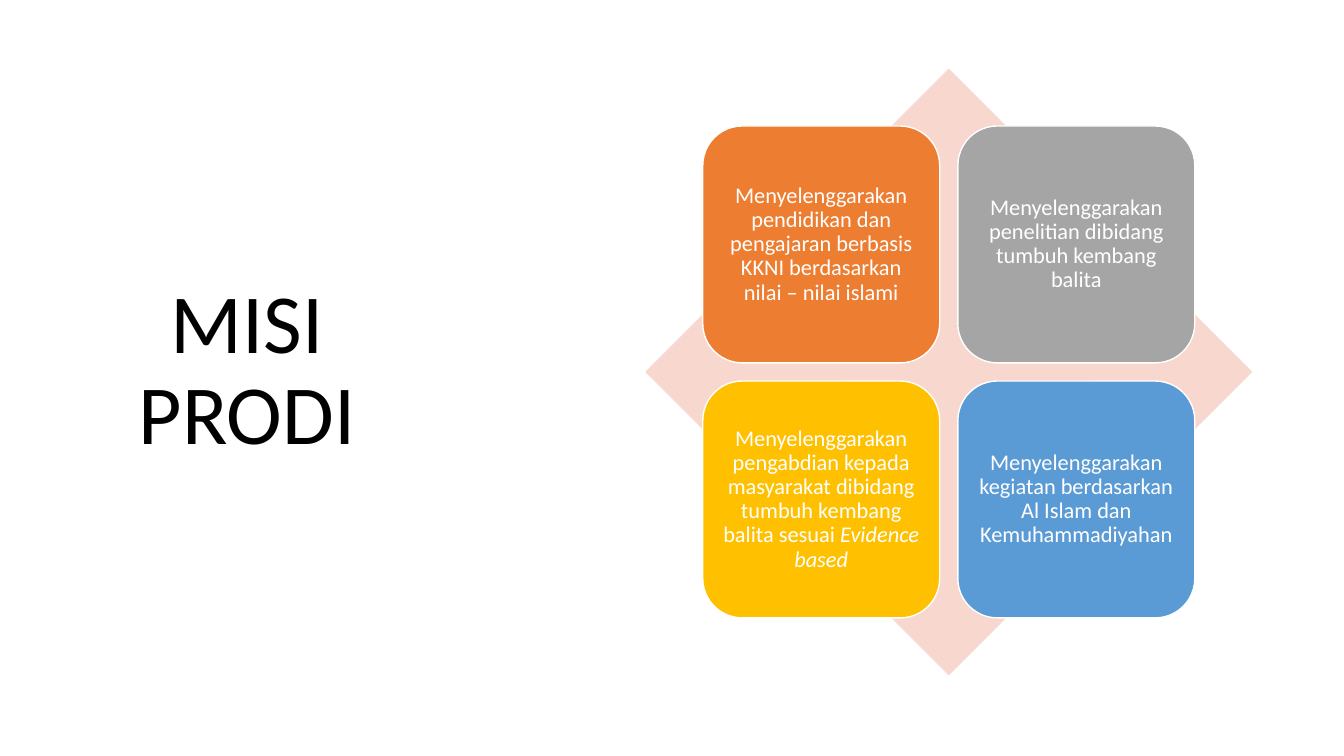
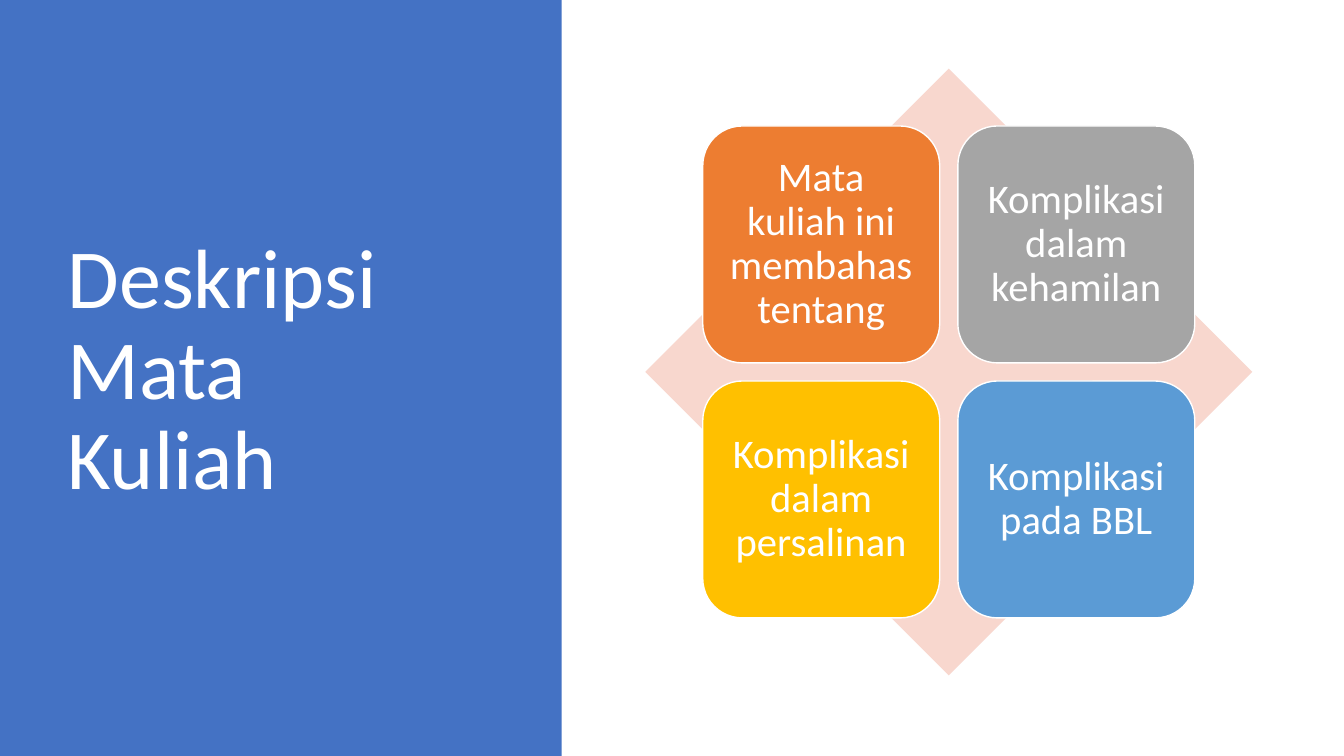
from dataclasses import dataclass
from itertools import product

from pptx import Presentation
from pptx.dml.color import RGBColor
from pptx.enum.shapes import MSO_SHAPE as Preset
from pptx.enum.text import MSO_ANCHOR as Anchor, MSO_AUTO_SIZE as AutoSize, PP_ALIGN as Align
from pptx.util import Pt

# Lengths are px, 100 to the inch
EMU_PER_PX = 9144
SLIDE_W, SLIDE_H = 1333, 750
TITLE_ONLY = 5

# Shared colours and text style
WHITE = RGBColor(0xFF, 0xFF, 0xFF)
BLACK = RGBColor(0x00, 0x00, 0x00)
BAND_BLUE = RGBColor(0x44, 0x72, 0xC4)
DIAMOND_PINK = RGBColor(0xF8, 0xD7, 0xCE)
TILE_COLOURS = (
    RGBColor(0xED, 0x7D, 0x31),
    RGBColor(0xA5, 0xA5, 0xA5),
    RGBColor(0xFF, 0xC0, 0x00),
    RGBColor(0x5B, 0x9B, 0xD5),
)
FONT = "Calibri"
TITLE_SIZE = 60
LINE_SPACING = 0.9

# Shared layout
TITLE_BOX = (57, 68, 416, 602)
BAND_W = 557
DIAMOND_LEFT, DIAMOND_TOP, DIAMOND_SIDE = 640, 68, 602
TILE_SIDE, TILE_STEP, TILE_OFFSET = 235, 253, 57


@dataclass(frozen=True)
class Run:
    text: str
    italic: bool = False


@dataclass(frozen=True)
class MatrixSlide:
    title: str
    title_colour: RGBColor
    title_align: Align
    title_right_inset: int
    has_band: bool
    tile_size: int
    tile_inset: int
    tiles: tuple[tuple[Run, ...], ...]


MISSION = MatrixSlide(
    "MISI PRODI", BLACK, Align.CENTER, 50, False, 16, 7,
    (
        (Run("Menyelenggarakan pendidikan dan pengajaran berbasis KKNI "
             "berdasarkan nilai – nilai islami"),),
        (Run("Menyelenggarakan penelitian dibidang tumbuh kembang balita"),),
        (Run("Menyelenggarakan pengabdian kepada masyarakat dibidang "
             "tumbuh kembang balita sesuai "), Run("Evidence based", True)),
        (Run("Menyelenggarakan kegiatan berdasarkan Al Islam dan Kemuhammadiyahan"),),
    ),
)
COURSE = MatrixSlide(
    "Deskripsi Mata Kuliah", WHITE, Align.LEFT, 10, True, 29, 12,
    (
        (Run("Mata kuliah ini membahas tentang"),),
        (Run("Komplikasi dalam kehamilan"),),
        (Run("Komplikasi dalam persalinan"),),
        (Run("Komplikasi pada BBL"),),
    ),
)


def px(length: int) -> int:
    return length * EMU_PER_PX


def set_format(target, values: dict) -> None:
    for name, value in values.items():
        setattr(target, name, value)


def add_block(shapes, preset: Preset, box: tuple[int, ...], fill: RGBColor):
    """Add a flat, unoutlined preset shape."""
    block = shapes.add_shape(preset, *map(px, box))
    block.shadow.inherit = False
    block.fill.solid()
    block.fill.fore_color.rgb = fill
    block.line.fill.background()
    return block


def write_text(frame, runs: tuple[Run, ...], size: int, colour: RGBColor,
               align: Align, insets: tuple[int, int, int, int]) -> None:
    """Fill a frame with one paragraph; insets are left, top, right, bottom."""
    left, top, right, bottom = map(px, insets)
    set_format(frame, {
        "word_wrap": True, "auto_size": AutoSize.NONE, "vertical_anchor": Anchor.MIDDLE,
        "margin_left": left, "margin_top": top,
        "margin_right": right, "margin_bottom": bottom,
    })
    paragraph = frame.paragraphs[0]
    set_format(paragraph, {"alignment": align, "line_spacing": LINE_SPACING})
    for run in runs:
        piece = paragraph.add_run()
        piece.text = run.text
        set_format(piece.font, {"name": FONT, "size": Pt(size), "italic": run.italic})
        piece.font.color.rgb = colour


def add_title(slide, content: MatrixSlide) -> None:
    title = slide.shapes.title
    box = map(px, TITLE_BOX)
    set_format(title, dict(zip(("left", "top", "width", "height"), box)))
    write_text(title.text_frame, (Run(content.title),), TITLE_SIZE, content.title_colour,
               content.title_align, (10, 5, content.title_right_inset, 5))


def add_band(slide) -> None:
    band = add_block(slide.shapes, Preset.RECTANGLE, (0, 0, BAND_W, SLIDE_H), BAND_BLUE)
    slide.shapes.title._element.addprevious(band._element)  # behind the title


def add_matrix(slide, content: MatrixSlide) -> None:
    """Draw the diamond and its two-by-two tiles as one group."""
    shapes = slide.shapes.add_group_shape().shapes
    add_block(shapes, Preset.DIAMOND,
              (DIAMOND_LEFT, DIAMOND_TOP, DIAMOND_SIDE, DIAMOND_SIDE), DIAMOND_PINK)
    cells = product(range(2), repeat=2)
    for (row, column), colour, runs in zip(cells, TILE_COLOURS, content.tiles):
        left = DIAMOND_LEFT + TILE_OFFSET + column * TILE_STEP
        top = DIAMOND_TOP + TILE_OFFSET + row * TILE_STEP
        tile = add_block(shapes, Preset.ROUNDED_RECTANGLE,
                         (left, top, TILE_SIDE, TILE_SIDE), colour)
        tile.line.color.rgb = WHITE
        tile.line.width = Pt(1)
        write_text(tile.text_frame, runs, content.tile_size, WHITE, Align.CENTER,
                   (content.tile_inset,) * 4)


def main() -> None:
    deck = Presentation()
    set_format(deck, {"slide_width": px(SLIDE_W), "slide_height": px(SLIDE_H)})
    for content in (MISSION, COURSE):
        slide = deck.slides.add_slide(deck.slide_layouts[TITLE_ONLY])
        add_title(slide, content)
        if content.has_band:
            add_band(slide)
        add_matrix(slide, content)
    deck.save("out.pptx")


if __name__ == "__main__":
    main()
